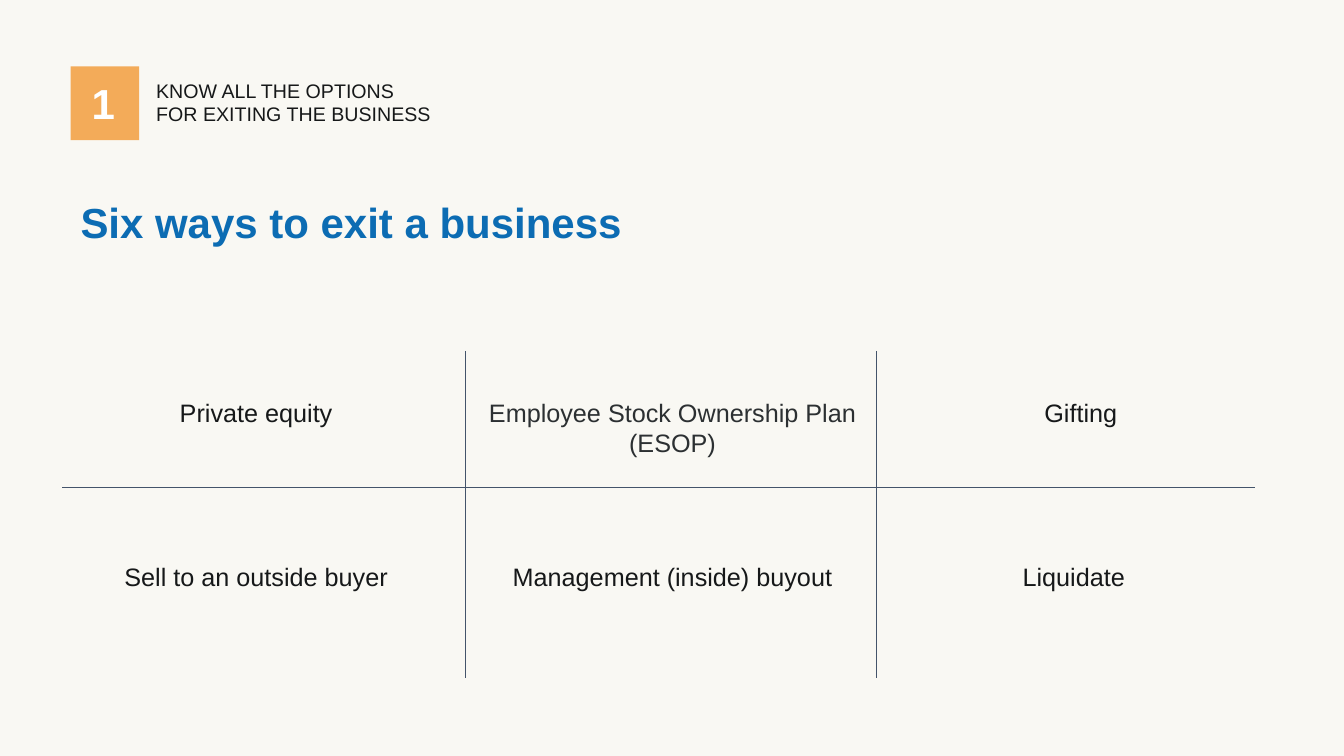
from pptx import Presentation
from pptx import util as u
from pptx.dml.color import RGBColor
from pptx.enum import shapes, text
from pptx.oxml import ns
from lxml import etree

COLORS = {"background": "F9F8F3", "blue": "0C6CB3", "orange": "F3AB59", "white": "FFFFFF",
          "ink": "161819", "gray": "2C3032", "rule": "44546A"}
STYLES = {
    "title": {"size": u.Pt(30), "bold": True, "name": "Arial"},
    "option": {"size": u.Pt(18), "name": "Arial"},
    "section": {"size": u.Pt(14), "name": "Arial"},
}

# Lines, style, colour, (left, top, width, height) in inches
HEADINGS = [
    (["Six ways to exit a business"], "title", "blue", (0.7, 1.9, 6.21, 0.61)),
    (["1"], "title", "white", (0.81, 0.72, 0.66, 0.61)),
    (["KNOW ALL THE OPTIONS", "FOR EXITING THE BUSINESS"], "section", "ink",
     (1.45, 0.73, 3.51, 0.57)),
]
BADGE = (0.7, 0.66, 0.68, 0.73)

# Option, colour, height; each row has its own column starts
OPTION_ROWS = [
    ((0.62, 4.75, 8.8), [("Private equity", "ink", 0.4),
                         ("Employee Stock Ownership Plan (ESOP)", "gray", 1.01),
                         ("Gifting", "ink", 0.4)]),
    ((0.62, 4.75, 8.73), [("Sell to an outside buyer", "ink", 0.4),
                          ("Management (inside) buyout", "ink", 0.4),
                          ("Liquidate", "ink", 0.4)]),
]
OPTION_TOP, ROW_PITCH, OPTION_WIDTH = 3.89, 1.63, 3.84
GRID_LEFT, GRID_RIGHT, GRID_TOP, GRID_BOTTOM = 0.62, 12.45, 3.48, 6.73
ROW_RULE, COLUMN_RULES = 4.84, (4.62, 8.69)


def inches(lengths):
    return [u.Inches(length) for length in lengths]


def rgb(name):
    return RGBColor.from_string(COLORS[name])


def add_text(slide, lines, style, color, box, align=text.PP_ALIGN.LEFT):
    frame = slide.shapes.add_textbox(*inches(box)).text_frame
    frame.word_wrap = True
    frame.auto_size = text.MSO_AUTO_SIZE.SHAPE_TO_FIT_TEXT
    paragraph = frame.paragraphs[0]
    paragraph.alignment = align
    for index, line in enumerate(lines):
        if index:
            paragraph.add_line_break()
        run = paragraph.add_run()
        run.text = line
        for name, value in STYLES[style].items():
            setattr(run.font, name, value)
        run.font.color.rgb = rgb(color)


def add_rule(slide, *ends):
    rule = slide.shapes.add_connector(shapes.MSO_CONNECTOR.STRAIGHT, *inches(ends))
    rule.line.color.rgb = rgb("rule")
    rule.line.width = u.Pt(0.75)
    etree.SubElement(rule.element.spPr, ns.qn("a:effectLst"))


def main():
    presentation = Presentation()
    presentation.slide_width, presentation.slide_height = inches((13.33, 7.5))
    slide = presentation.slides.add_slide(presentation.slide_layouts[6])
    slide.background.fill.solid()
    slide.background.fill.fore_color.rgb = rgb("background")

    add_rule(slide, GRID_LEFT, ROW_RULE, GRID_RIGHT, ROW_RULE)
    for x in COLUMN_RULES:
        add_rule(slide, x, GRID_TOP, x, GRID_BOTTOM)

    for row, (lefts, options) in enumerate(OPTION_ROWS):
        top = OPTION_TOP + row * ROW_PITCH
        for left, (option, color, height) in zip(lefts, options):
            add_text(slide, [option], "option", color, (left, top, OPTION_WIDTH, height),
                     text.PP_ALIGN.CENTER)

    badge = slide.shapes.add_shape(shapes.MSO_SHAPE.RECTANGLE, *inches(BADGE))
    badge.shadow.inherit = False
    badge.fill.solid()
    badge.fill.fore_color.rgb = rgb("orange")
    badge.line.fill.background()

    for heading in HEADINGS:
        add_text(slide, *heading)

    presentation.save("out.pptx")


if __name__ == "__main__":
    main()
